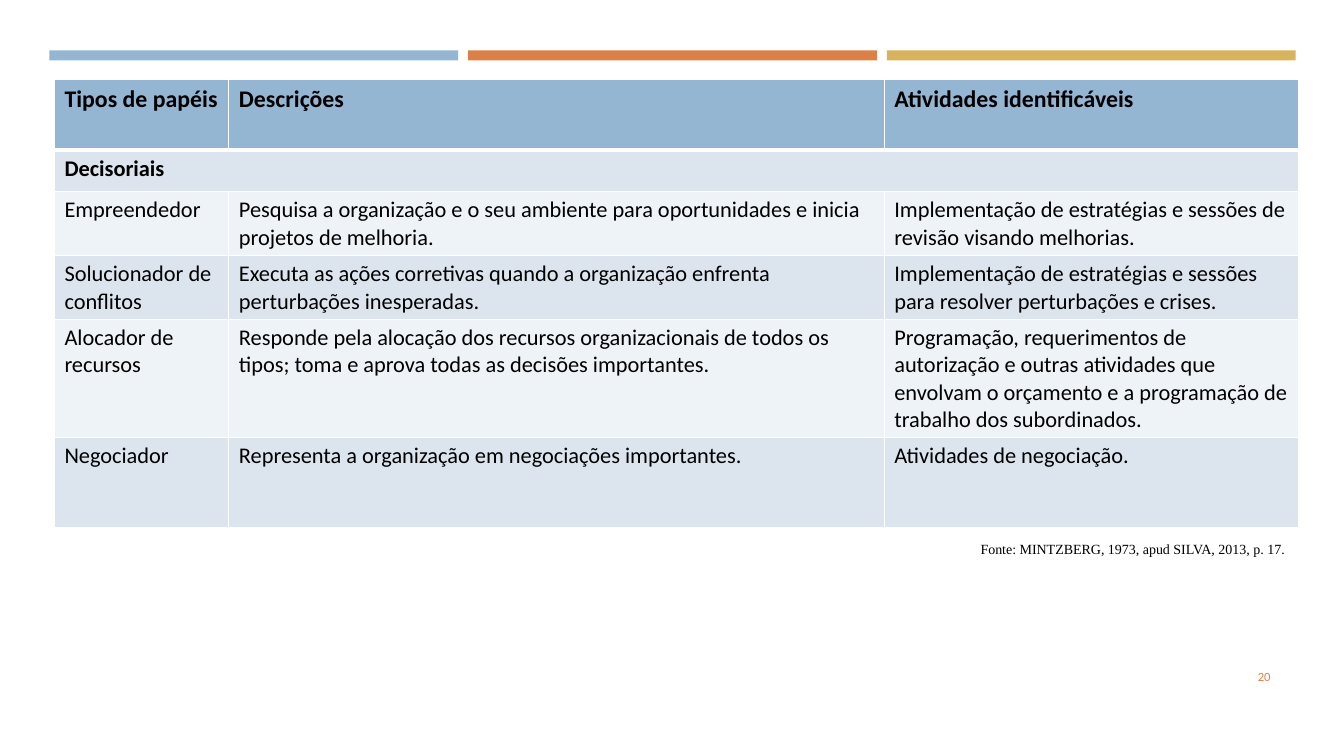
from dataclasses import dataclass

from lxml.etree import SubElement
from pptx import Presentation
from pptx.dml.color import RGBColor
from pptx.enum.shapes import MSO_SHAPE
from pptx.enum.text import MSO_ANCHOR, PP_ALIGN
from pptx.oxml.ns import qn
from pptx.util import Inches, Pt


@dataclass(frozen=True)
class Theme:
    """Colours, fonts and type sizes of the slide."""
    blue: str = "94B6D2"
    orange: str = "DD8047"
    gold: str = "D8B25C"
    band_dark: str = "DCE5EE"
    band_light: str = "EEF3F7"
    white: str = "FFFFFF"
    black: str = "000000"
    font: str = "Calibri"
    source_font: str = "Times New Roman"
    header_size: int = 17
    body_size: int = 16
    source_size: int = 10
    number_size: int = 9


THEME = Theme()
COLUMN_WIDTHS = [1.73, 6.5, 4.11]
ROW_HEIGHTS = [0.7, 0.41, 0.63, 0.63, 1.17, 0.9]
ROLES = [
    ["Tipos de papéis", "Descrições", "Atividades identificáveis"],
    ["Decisoriais"],
    ["Empreendedor",
     "Pesquisa a organização e o seu ambiente para oportunidades e inicia projetos de melhoria.",
     "Implementação de estratégias e sessões de revisão visando melhorias."],
    ["Solucionador de\nconflitos",
     "Executa as ações corretivas quando a organização enfrenta perturbações inesperadas.",
     "Implementação de estratégias e sessões para resolver perturbações e crises."],
    ["Alocador de\nrecursos",
     "Responde pela alocação dos recursos organizacionais de todos os tipos; "
     "toma e aprova todas as decisões importantes.",
     "Programação, requerimentos de autorização e outras atividades que envolvam "
     "o orçamento e a programação de trabalho dos subordinados."],
    ["Negociador",
     "Representa a organização em negociações importantes.",
     "Atividades de negociação."],
]


def write_text(frame, text, size, font=THEME.font, color=THEME.black, bold=False,
               align=PP_ALIGN.LEFT):
    """Write each line of the text as a paragraph with one formatted run."""
    for index, line in enumerate(text.split("\n")):
        paragraph = frame.add_paragraph() if index else frame.paragraphs[0]
        paragraph.alignment = align
        run = paragraph.add_run()
        run.text = line
        run.font.size = Pt(size)
        run.font.name = font
        run.font.bold = bold
        run.font.color.rgb = RGBColor.from_string(color)


def set_borders(cell, top, bottom):
    """Draw white borders around a cell, with top and bottom widths in points."""
    properties = cell._tc.get_or_add_tcPr()
    widths = {"a:lnL": 1, "a:lnR": 1, "a:lnT": top, "a:lnB": bottom}
    for position, (tag, width) in enumerate(widths.items()):
        line = SubElement(properties, qn(tag), w=str(Pt(width)))
        fill = SubElement(line, qn("a:solidFill"))
        SubElement(fill, qn("a:srgbClr"), val=THEME.white)
        properties.insert(position, line)


def add_accent_bars(slide, left, top, width, height, gap):
    """Place the three coloured bars side by side across the box."""
    colors = [THEME.blue, THEME.orange, THEME.gold]
    bar_width = (width - gap * (len(colors) - 1)) / len(colors)
    for index, color in enumerate(colors):
        bar = slide.shapes.add_shape(
            MSO_SHAPE.RECTANGLE, Inches(left + index * (bar_width + gap)), Inches(top),
            Inches(bar_width), Inches(height))
        bar.shadow.inherit = False
        bar.fill.solid()
        bar.fill.fore_color.rgb = RGBColor.from_string(color)
        bar.line.fill.background()


def add_roles_table(slide, left, top):
    """Build the table of roles with its header, section row and banded rows."""
    table = slide.shapes.add_table(
        len(ROW_HEIGHTS), len(COLUMN_WIDTHS), Inches(left), Inches(top),
        Inches(sum(COLUMN_WIDTHS)), Inches(sum(ROW_HEIGHTS))).table
    for column, width in zip(table.columns, COLUMN_WIDTHS):
        column.width = Inches(width)
    for row, height in zip(table.rows, ROW_HEIGHTS):
        row.height = Inches(height)
    table.cell(1, 0).merge(table.cell(1, len(COLUMN_WIDTHS) - 1))

    for row_index, row in enumerate(table.rows):
        band = THEME.band_dark if row_index % 2 else THEME.band_light
        for cell in row.cells:
            cell.fill.solid()
            cell.fill.fore_color.rgb = RGBColor.from_string(band if row_index else THEME.blue)
            set_borders(cell, 3 if row_index == 1 else 1, 3 if row_index == 0 else 1)
        for cell, text in zip(row.cells, ROLES[row_index]):
            size = THEME.body_size if row_index else THEME.header_size
            write_text(cell.text_frame, text, size, bold=row_index < 2)


def add_caption(slide, left, top, width, height, text, size, font, color):
    """Add a right-aligned line of small text, centred vertically in its box."""
    box = slide.shapes.add_textbox(Inches(left), Inches(top), Inches(width), Inches(height))
    frame = box.text_frame
    frame.word_wrap = True
    frame.vertical_anchor = MSO_ANCHOR.MIDDLE
    write_text(frame, text, size, font, color, align=PP_ALIGN.RIGHT)


def main():
    """Build the slide and save the presentation."""
    presentation = Presentation()
    presentation.slide_width = Inches(13.33)
    presentation.slide_height = Inches(7.5)
    slide = presentation.slides.add_slide(presentation.slide_layouts[6])
    add_accent_bars(slide, 0.49, 0.5, 12.36, 0.1, 0.1)
    add_caption(slide, 11.55, 6.51, 1.15, 0.4, "20",
                THEME.number_size, THEME.font, THEME.orange)
    add_roles_table(slide, 0.54, 0.79)
    add_caption(slide, 7.91, 5.31, 4.93, 0.27,
                "Fonte: MINTZBERG, 1973, apud SILVA, 2013, p. 17.",
                THEME.source_size, THEME.source_font, THEME.black)
    presentation.save("out.pptx")


if __name__ == "__main__":
    main()
